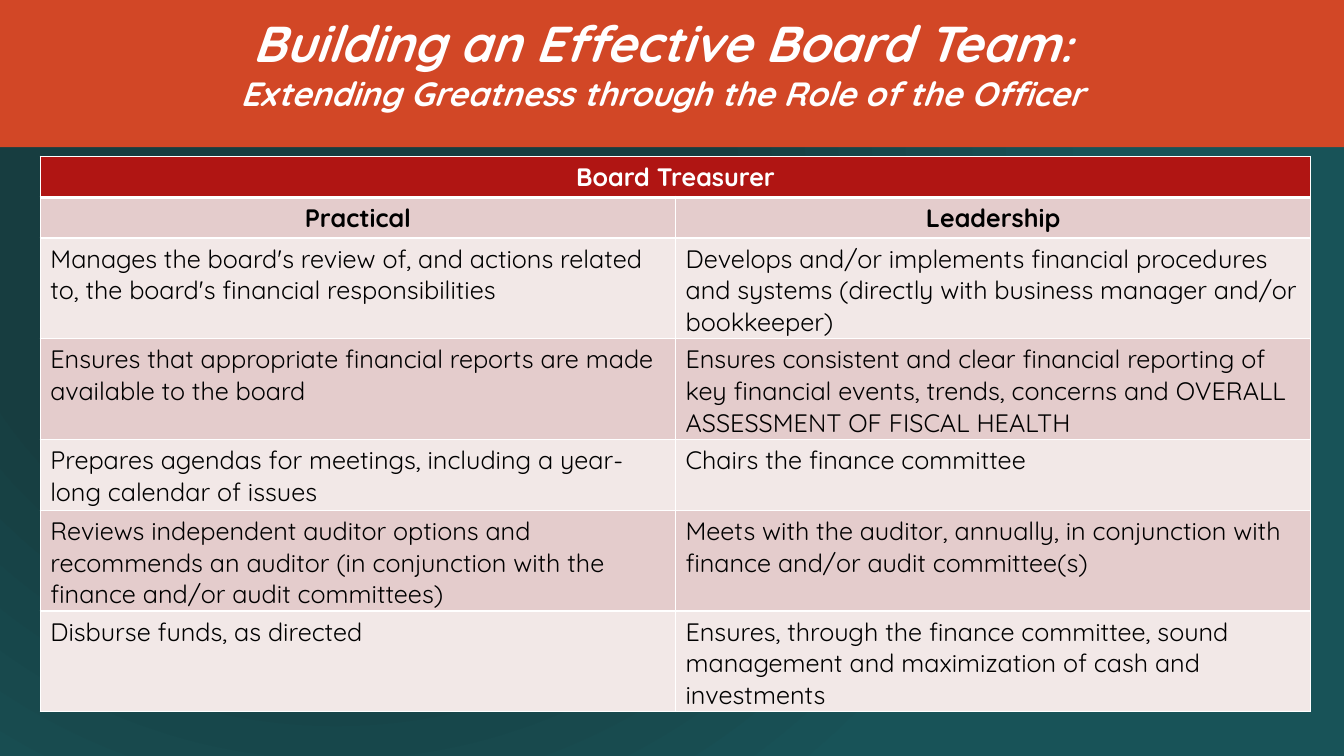
import pptx
import pptx.dml.color
import pptx.enum.shapes
import pptx.enum.text
import pptx.oxml
import pptx.oxml.ns
import pptx.util

WIDTH, HEIGHT = 13.33, 7.5
FONT = "Quicksand"
WHITE, BLACK = "FFFFFF", "000000"
BAND_ORANGE, HEADER_RED = "D24726", "B01513"
ROW_TINTS = ["E4CCCC", "F2E8E7"]
CENTER = pptx.enum.text.PP_ALIGN.CENTER
LEFT = pptx.enum.text.PP_ALIGN.LEFT

OFFICER = "Board Treasurer"
DUTIES = [
    ("Practical", "Leadership"),
    ("Manages the board's review of, and actions related to, the board's financial responsibilities",
     "Develops and/or implements financial procedures and systems (directly with business manager and/or bookkeeper)"),
    ("Ensures that appropriate financial reports are made available to the board",
     "Ensures consistent and clear financial reporting of key financial events, trends, concerns and OVERALL ASSESSMENT OF FISCAL HEALTH"),
    ("Prepares agendas for meetings, including a year-long calendar of issues",
     "Chairs the finance committee"),
    ("Reviews independent auditor options and recommends an auditor (in conjunction with the finance and/or audit committees)",
     "Meets with the auditor, annually, in conjunction with finance and/or audit committee(s)"),
    ("Disburse funds, as directed",
     "Ensures, through the finance committee, sound management and maximization of cash and investments"),
]
ROW_HEIGHTS = [0.41, 0.4, 1, 1, 0.7, 1, 1]


def inches(*lengths):
    return [pptx.util.Inches(length) for length in lengths]


def color(hex_string):
    return pptx.dml.color.RGBColor.from_string(hex_string)


def paint(target, hex_string):
    target.fill.solid()
    target.fill.fore_color.rgb = color(hex_string)


def add_run(paragraph, text, size, hex_string, bold=False, italic=False):
    run = paragraph.add_run()
    run.text = text
    run.font.name = FONT
    run.font.size = pptx.util.Pt(size)
    run.font.color.rgb = color(hex_string)
    run.font.bold = bold
    run.font.italic = italic


def set_radial_background(slide):
    fill = slide.background.fill
    fill.gradient()
    for stop, (position, shade) in zip(fill.gradient_stops, [(0.48, "173D40"), (1, "185358")]):
        stop.position = position
        stop.color.rgb = color(shade)
    gradient = next(slide.element.iter(pptx.oxml.ns.qn("a:gradFill")))
    linear = gradient.find(pptx.oxml.ns.qn("a:lin"))
    gradient.replace(linear, pptx.oxml.parse_xml(
        f'<a:path {pptx.oxml.ns.nsdecls("a")} path="circle">'
        '<a:fillToRect l="50000" t="50000" r="100000" b="100000"/></a:path>'))


def add_title_band(slide):
    band = slide.shapes.add_shape(
        pptx.enum.shapes.MSO_SHAPE.RECTANGLE, *inches(0, 0, WIDTH, 1.46))
    band.shadow.inherit = False
    paint(band, BAND_ORANGE)
    band.line.fill.background()

    title = slide.shapes.add_textbox(*inches(1.72, 0.07, 9.69, 1.92)).text_frame
    title.word_wrap = True
    heading = title.paragraphs[0]
    heading.alignment = CENTER
    add_run(heading, "Building an Effective Board Team", 36, WHITE, True, True)
    add_run(heading, ":", 32, WHITE, True, True)
    heading.add_line_break()
    add_run(heading, "Extending Greatness through the Role of the Officer", 24, WHITE, True, True)


def set_borders(cell, top=1, bottom=1):
    properties = cell._tc.get_or_add_tcPr()
    for index, (side, points) in enumerate([("L", 1), ("R", 1), ("T", top), ("B", bottom)]):
        properties.insert(index, pptx.oxml.parse_xml(
            f'<a:ln{side} {pptx.oxml.ns.nsdecls("a")} w="{pptx.util.Pt(points)}">'
            f'<a:solidFill><a:srgbClr val="{WHITE}"/></a:solidFill></a:ln{side}>'))


def fill_cell(cell, text, tint, ink=BLACK, heading=False):
    paint(cell, tint)
    paragraph = cell.text_frame.paragraphs[0]
    paragraph.alignment = CENTER if heading else LEFT
    add_run(paragraph, text, 18, ink, heading)


def add_duties_table(slide):
    table = slide.shapes.add_table(
        len(ROW_HEIGHTS), 2, *inches(0.4, 1.55, 12.6, sum(ROW_HEIGHTS))).table
    for row, height in zip(table.rows, inches(*ROW_HEIGHTS)):
        row.height = height
    table.cell(0, 0).merge(table.cell(0, 1))
    fill_cell(table.cell(0, 0), OFFICER, HEADER_RED, WHITE, True)
    for number, duties in enumerate(DUTIES):
        for column, duty in enumerate(duties):
            fill_cell(table.cell(number + 1, column), duty, ROW_TINTS[number % 2],
                      heading=number == 0)
    for number, row in enumerate(table.rows):
        for cell in row.cells:
            set_borders(cell, top=3 if number == 1 else 1, bottom=3 if number == 0 else 1)


def main():
    presentation = pptx.Presentation()
    presentation.slide_width, presentation.slide_height = inches(WIDTH, HEIGHT)
    slide = presentation.slides.add_slide(presentation.slide_layouts[6])
    set_radial_background(slide)
    add_title_band(slide)
    add_duties_table(slide)
    presentation.save("out.pptx")


if __name__ == "__main__":
    main()
